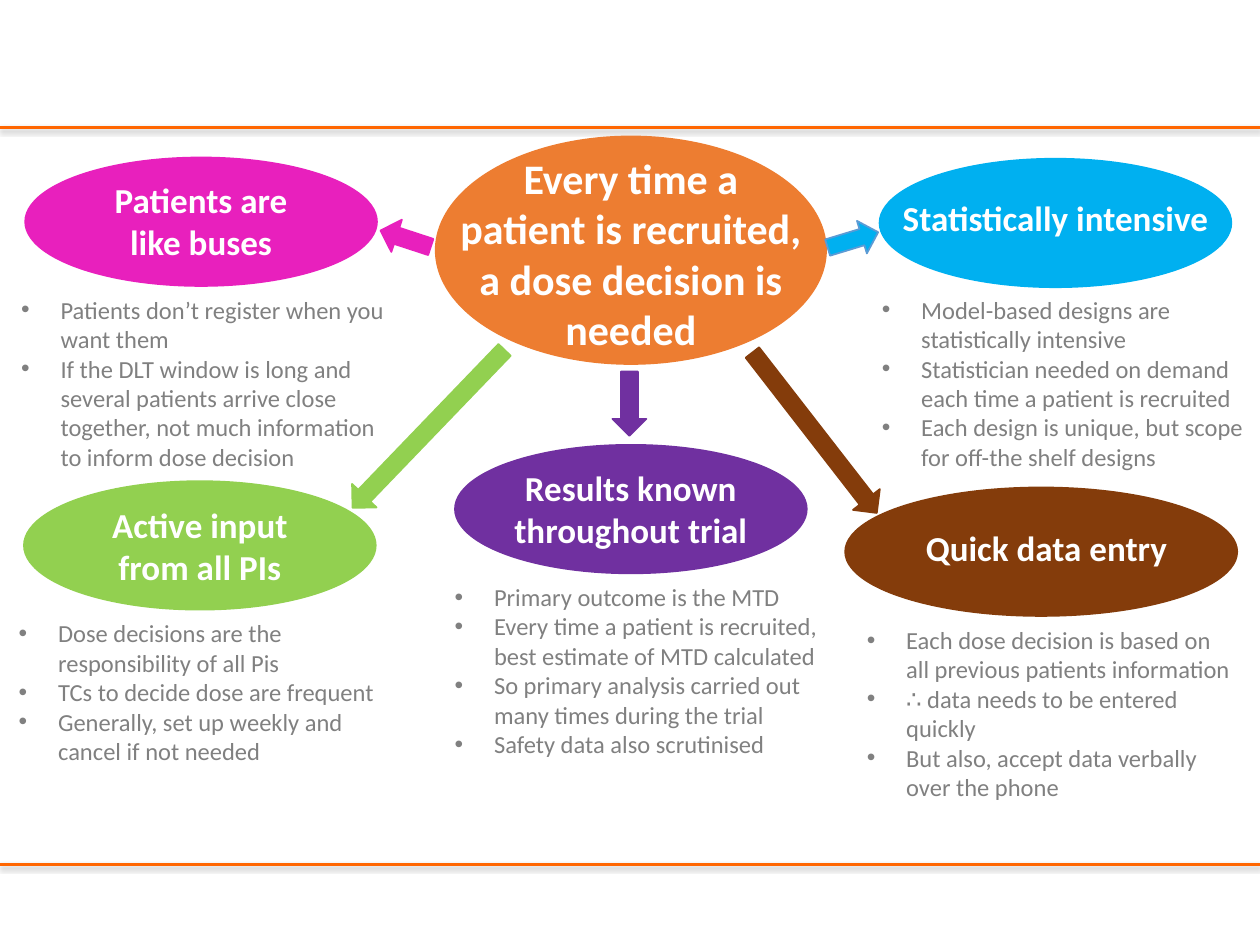
from lxml import etree
from pptx import Presentation
from pptx import util as u
from pptx.dml import color
from pptx.enum import shapes, text
from pptx.oxml import ns

FONT = "Calibri"
WHITE, GREY, RULE = "FFFFFF", "808080", "FF6600"
ORANGE, PINK, BLUE = "ED7D31", "E820BD", "00B0F0"
GREEN, PURPLE, BROWN = "92D050", "7030A0", "843C0B"
NOTE_WIDTH, NOTE_INDENT = 222.5, 22.5
ARROW_HEIGHT = 19.4


def paint(colour_format, hex_colour):
    colour_format.rgb = color.RGBColor.from_string(hex_colour)


def points(*lengths):
    return [u.Pt(length) for length in lengths]


def add_filled(container, kind, box, fill, line=None):
    shape = container.shapes.add_shape(kind, *points(*box))
    shape.shadow.inherit = False
    shape.fill.solid()
    paint(shape.fill.fore_color, fill)
    paint(shape.line.color, line or fill)
    shape.line.width = u.Pt(1)
    return shape


def add_text(container, box, content, size, colour, bold=False, wrap=True):
    shape = container.shapes.add_textbox(*points(*box))
    frame = shape.text_frame
    frame.text = content
    frame.word_wrap = wrap
    frame.auto_size = text.MSO_AUTO_SIZE.SHAPE_TO_FIT_TEXT
    for paragraph in frame.paragraphs:
        for run in paragraph.runs:
            run.font.name = FONT
            run.font.size = u.Pt(size)
            run.font.bold = bold
            paint(run.font.color, colour)
    return frame


def add_rule(slide, left, top, width):
    rule = slide.shapes.add_connector(
        shapes.MSO_CONNECTOR.STRAIGHT, *points(left, top, left + width, top))
    paint(rule.line.color, RULE)
    rule.line.width = u.Pt(1.5)
    effects = etree.SubElement(rule._element.spPr, ns.qn("a:effectLst"))
    shadow = etree.SubElement(
        effects, ns.qn("a:outerShdw"), blurRad=str(u.Pt(3.1)),
        dist=str(u.Pt(1.6)), dir="5400000", rotWithShape="0")
    black = etree.SubElement(shadow, ns.qn("a:srgbClr"), val="000000")
    etree.SubElement(black, ns.qn("a:alpha"), val="38000")


def add_bubble(slide, box, fill, label, label_box, size=20):
    left, top, width, height = box
    shift, drop, label_width, label_height = label_box
    group = slide.shapes.add_group_shape()
    add_filled(group, shapes.MSO_SHAPE.OVAL, box, fill)
    place = (left + (width - label_width) / 2 + shift, top + drop,
             label_width, label_height)
    wrap = label_height > 32
    frame = add_text(group, place, label, size, WHITE, True, wrap)
    for paragraph in frame.paragraphs:
        paragraph.alignment = text.PP_ALIGN.CENTER


def add_notes(slide, left, top, height, items):
    frame = add_text(slide, (left, top, NOTE_WIDTH, height),
                     "\n".join(items), 14, GREY)
    indent = u.Pt(NOTE_INDENT)
    for paragraph in frame.paragraphs:
        properties = paragraph._p.get_or_add_pPr()
        properties.set("marL", str(indent))
        properties.set("indent", str(-indent))
        etree.SubElement(properties, ns.qn("a:buFont"), typeface="Arial")
        etree.SubElement(properties, ns.qn("a:buChar"), char="•")


def add_arrow(slide, left, top, length, rotation, fill, line=None):
    arrow = add_filled(slide, shapes.MSO_SHAPE.RIGHT_ARROW,
                       (left, top, length, ARROW_HEIGHT), fill, line)
    arrow.rotation = rotation


BUBBLES = [
    ((249, 78, 223, 130), ORANGE,
     "Every time a\npatient is recruited, a dose decision is needed",
     (0, 5.5, 222, 124), 24),
    ((13.7, 275, 201, 73.4), GREEN, "Active input\nfrom all PIs",
     (0, 9.4, 164, 55.4)),
    ((483, 278.6, 224, 73.4), BROWN, "Quick data entry",
     (3, 18.8, 153.4, 31.7)),
    ((502.6, 90.7, 201, 73.4), BLUE, "Statistically intensive",
     (0, 18, 190.8, 31.7)),
    ((260, 254.2, 201, 73.4), PURPLE, "Results known throughout trial",
     (0, 8.6, 183.6, 55.4)),
    ((14.4, 90, 201, 73.4), PINK, "Patients are\nlike buses",
     (0, 8.6, 174.2, 55.4)),
]

ARROWS = [
    (472.3, 127.4, 30.2, 343.1, BLUE, "5B9BD5"),
    (341.3, 221, 36.7, 90, PURPLE),
    (407.5, 237.6, 116, 52.2, BROWN),
    (182.2, 235.4, 125.3, 133.9, GREEN),
    (216.7, 126.7, 30.2, 198.1, PINK),
]

NOTES = [
    (496.8, 164.9, 108.7, [
        "Model-based designs are statistically intensive",
        "Statistician needed on demand each time a patient is recruited",
        "Each design is unique, but scope for off-the shelf designs"]),
    (488.2, 353.5, 108.7, [
        "Each dose decision is based on all previous patients information",
        "∴ data needs to be entered quickly",
        "But also, accept data verbally over the phone"]),
    (252.7, 329, 108.7, [
        "Primary outcome is the MTD",
        "Every time a patient is recruited, best estimate of MTD calculated",
        "So primary analysis carried out many times during the trial",
        "Safety data also scrutinised"]),
    (3.6, 349.9, 92, [
        "Dose decisions are the responsibility of all Pis",
        "TCs to decide dose are frequent",
        "Generally, set up weekly and cancel if not needed"]),
    (5, 164.9, 108.7, [
        "Patients don’t register when you want them",
        "If the DLT window is long and several patients arrive close "
        "together, not much information to inform dose decision"]),
]


def main():
    presentation = Presentation()
    presentation.slide_width, presentation.slide_height = points(720, 540)
    slide = presentation.slides.add_slide(presentation.slide_layouts[6])
    for top in (72.7, 493.9):
        add_rule(slide, 0, top, 720)
    for bubble in BUBBLES:
        add_bubble(slide, *bubble)
    for arrow in ARROWS:
        add_arrow(slide, *arrow)
    for notes in NOTES:
        add_notes(slide, *notes)
    presentation.save("out.pptx")


if __name__ == "__main__":
    main()
